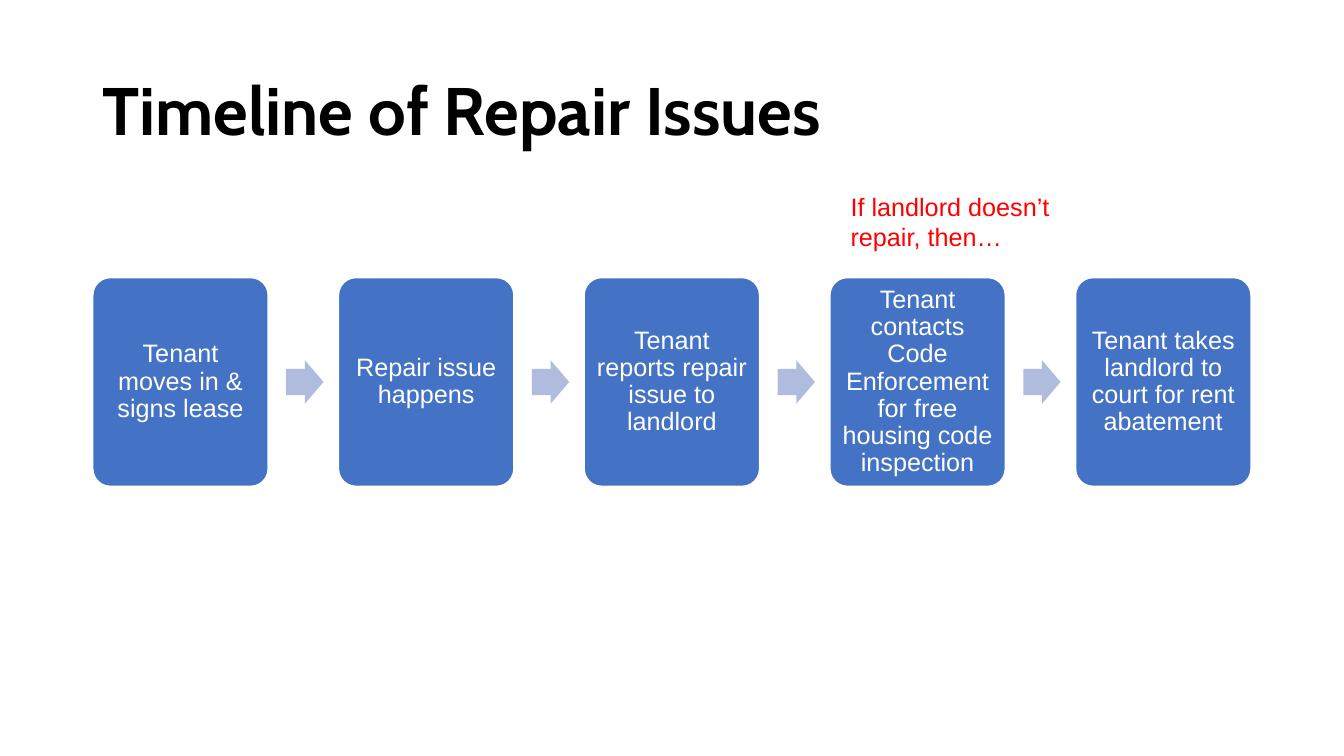
"""Build the slide showing the timeline of repair issues."""
from dataclasses import dataclass

from pptx import Presentation
from pptx.dml.color import RGBColor
from pptx.enum.shapes import MSO_SHAPE as Preset
from pptx.enum.text import MSO_ANCHOR as Anchor, PP_ALIGN as Align
from pptx.shapes.autoshape import Shape
from pptx.shapes.shapetree import SlideShapes
from pptx.text.text import TextFrame
from pptx.util import Pt

BLACK = RGBColor(0x00, 0x00, 0x00)
WHITE = RGBColor(0xFF, 0xFF, 0xFF)
RED = RGBColor(0xFF, 0x00, 0x00)
BLUE = RGBColor(0x44, 0x72, 0xC4)
PALE_BLUE = RGBColor(0xB0, 0xBC, 0xDE)

STEPS = (
    "Tenant moves in & signs lease",
    "Repair issue happens",
    "Tenant reports repair issue to landlord",
    "Tenant contacts Code Enforcement for free housing code inspection",
    "Tenant takes landlord to court for rent abatement",
)
FIRST_LEFT = 66.3
STEP_PITCH = 175.5
ARROW_OFFSET = 138.2


@dataclass(frozen=True)
class Block:
    """Describe a repeated preset shape, with lengths in points."""

    preset: Preset
    top: float
    width: float
    height: float
    adjustments: tuple[float, ...]
    fill: RGBColor
    outline: RGBColor | None = None


STEP = Block(Preset.ROUNDED_RECTANGLE, 198.3, 125.3, 149.1, (0.1,), BLUE, WHITE)
ARROW = Block(Preset.RIGHT_ARROW, 257.3, 26.6, 31.1, (0.6, 0.5), PALE_BLUE)


def write(frame: TextFrame, text: str, *, color: RGBColor, size: float = 18,
          font: str = "Arial", bold: bool = False, align: Align = Align.LEFT,
          anchor: Anchor = Anchor.TOP, spacing: float = 1.0,
          margin: float | None = None) -> None:
    """Fill a text frame with one formatted paragraph."""
    frame.word_wrap = True
    frame.vertical_anchor = anchor
    if margin is not None:
        frame.margin_left = frame.margin_right = Pt(margin)
        frame.margin_top = frame.margin_bottom = Pt(margin)
    paragraph = frame.paragraphs[0]
    paragraph.alignment = align
    paragraph.line_spacing = spacing
    run = paragraph.add_run()
    run.text = text
    run.font.name = font
    run.font.size = Pt(size)
    run.font.bold = bold
    run.font.color.rgb = color


def draw(shapes: SlideShapes, block: Block, left: float) -> Shape:
    """Draw a block at the given left edge."""
    drawn = shapes.add_shape(block.preset, Pt(left), Pt(block.top),
                             Pt(block.width), Pt(block.height))
    drawn.shadow.inherit = False
    for index, value in enumerate(block.adjustments):
        drawn.adjustments[index] = value
    drawn.fill.solid()
    drawn.fill.fore_color.rgb = block.fill
    if block.outline is None:
        drawn.line.fill.background()
    else:
        drawn.line.color.rgb = block.outline
        drawn.line.width = Pt(1)
    return drawn


def main() -> None:
    """Build and save the presentation."""
    deck = Presentation()
    deck.slide_width, deck.slide_height = Pt(960), Pt(540)
    slide = deck.slides.add_slide(deck.slide_layouts[5])

    heading = slide.shapes.title
    heading.left, heading.top = Pt(66), Pt(28.75)
    heading.width, heading.height = Pt(828), Pt(104.4)
    write(heading.text_frame, "Timeline of Repair Issues", color=BLACK, size=48,
          font="Cabin", bold=True, anchor=Anchor.MIDDLE, spacing=0.9)

    for index, wording in enumerate(STEPS):
        left = FIRST_LEFT + index * STEP_PITCH
        if index:
            draw(slide.shapes, ARROW, left - STEP_PITCH + ARROW_OFFSET)
        step = draw(slide.shapes, STEP, left)
        write(step.text_frame, wording, color=WHITE, align=Align.CENTER,
              anchor=Anchor.MIDDLE, spacing=0.9, margin=5)

    condition = slide.shapes.add_textbox(Pt(600.5), Pt(133.2), Pt(198.7), Pt(50.9))
    write(condition.text_frame, "If landlord doesn’t repair, then…", color=RED)

    deck.save("out.pptx")


if __name__ == "__main__":
    main()
